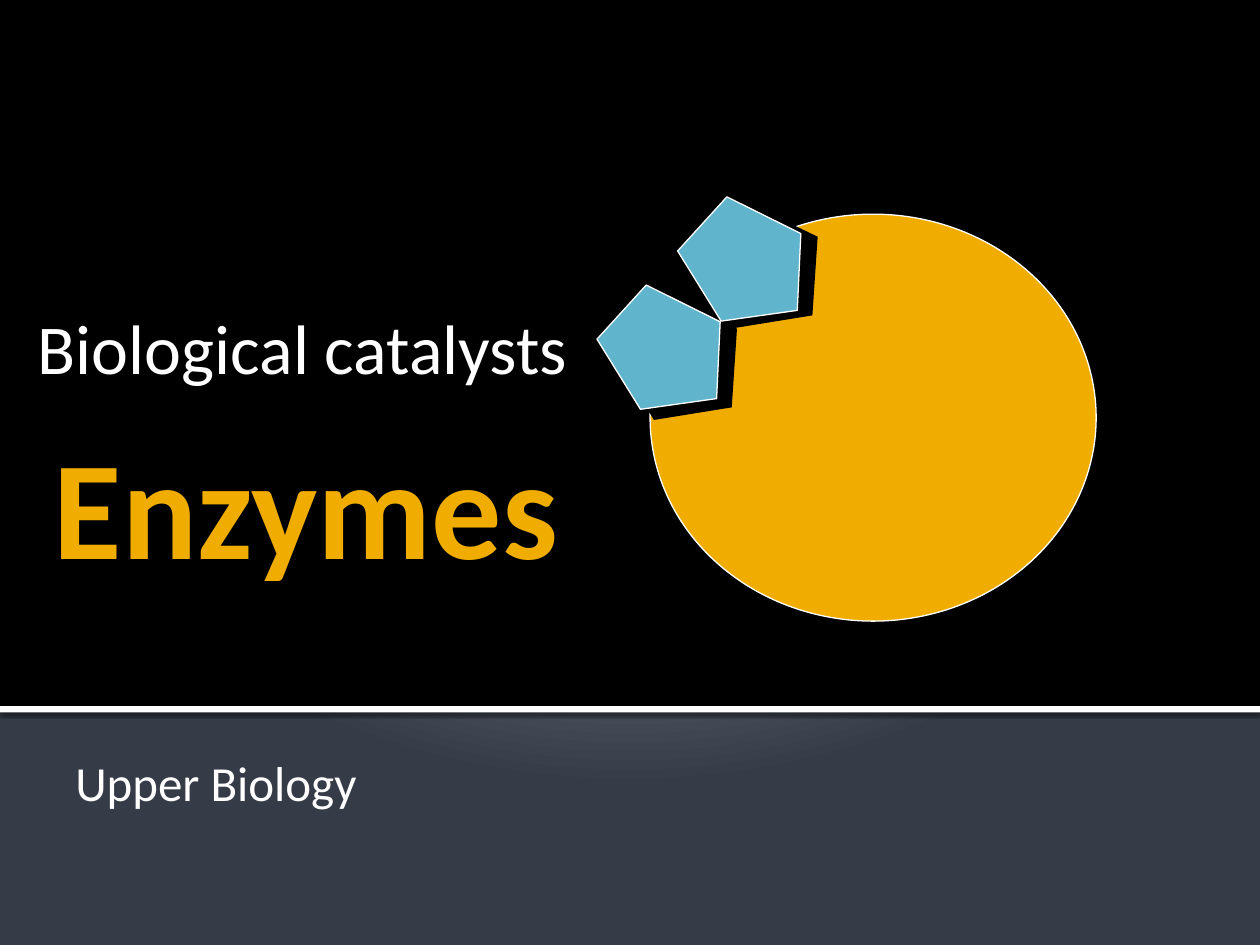
from dataclasses import dataclass
from lxml.etree import SubElement
from pptx import Presentation
from pptx.dml.color import RGBColor
from pptx.enum.shapes import MSO_SHAPE as Shape
from pptx.enum.text import MSO_ANCHOR as Anchor
from pptx.oxml import parse_xml
from pptx.oxml.ns import nsdecls, qn
from pptx.util import Inches, Pt


@dataclass(frozen=True)
class Theme:
    font: str = "Calibri"
    black: str = "000000"
    white: str = "FFFFFF"
    enzyme: str = "F0AD00"
    substrate: str = "60B5CC"
    backdrop: tuple = ((0, "C1C5D3"), (12, "C1C5D3"), (20, "BFC4D2"), (100, "353B47"))
    title: int = 80
    subtitle: int = 40
    course: int = 28
    outline: float = 0.75


THEME = Theme()
WIDTH, HEIGHT = 10, 7.5
PANEL = 0.75 * HEIGHT
TURN = 132.3

TEXTS = [
    ("Enzymes", (0.33, 3.33, 8.83, 1.83), THEME.title, THEME.enzyme, True, Anchor.TOP, (0.1, 0, 0.05, 0)),
    ("Biological catalysts", (0.17, 1.44, 8.83, 1.64), THEME.subtitle, THEME.white, False, Anchor.BOTTOM, (0.13, 0, 0.05, 0)),
    ("Upper Biology", (0.5, 5.92, 4.76, 0.57), THEME.course, THEME.white, False, Anchor.TOP, (0.1, 0.05, 0.1, 0.05)),
]
ACTIVE_SITE = [
    (Shape.REGULAR_PENTAGON, (5.58, 1.65, 0.98, 1.02), TURN),
    (Shape.REGULAR_PENTAGON, (4.94, 2.38, 0.98, 1.02), TURN),
    (Shape.RECTANGLE, (5.26, 2.17, 0.66, 0.55), 313.3),
]
SUBSTRATE = [
    (Shape.REGULAR_PENTAGON, (5.48, 1.61, 0.94, 1.02), TURN),
    (Shape.REGULAR_PENTAGON, (4.84, 2.31, 0.94, 1.02), TURN),
]


def add_figure(shapes, kind, place, fill, outline=None, turn=0):
    figure = shapes.add_shape(kind, *map(Inches, place))
    figure.shadow.inherit = False
    figure.rotation = turn
    figure.fill.solid()
    figure.fill.fore_color.rgb = RGBColor.from_string(fill)
    if outline:
        figure.line.color.rgb = RGBColor.from_string(outline)
        figure.line.width = Pt(THEME.outline)
    else:
        figure.line.fill.background()
    return figure


def add_group(page, parts, fill, outline=None):
    group = page.shapes.add_group_shape()
    for kind, place, turn in parts:
        add_figure(group.shapes, kind, place, fill, outline, turn)


def add_text(page, words, place, size, color, bold, anchor, insets):
    box = page.shapes.add_textbox(*map(Inches, place))
    frame = box.text_frame
    frame.word_wrap = True
    frame.vertical_anchor = anchor
    (frame.margin_left, frame.margin_top,
     frame.margin_right, frame.margin_bottom) = map(Inches, insets)
    para = frame.paragraphs[0]
    span = para.add_run()
    span.text = words
    span.font.name = THEME.font
    span.font.size = Pt(size)
    span.font.bold = bold
    span.font.color.rgb = RGBColor.from_string(color)


def paint_backdrop(page):
    page.background.fill.gradient()
    plain = next(page.element.iter(qn("a:gradFill")))
    stops = "".join(
        f'<a:gs pos="{share * 1000}"><a:srgbClr val="{color}"/></a:gs>'
        for share, color in THEME.backdrop
    )
    radial = parse_xml(
        f'<a:gradFill {nsdecls("a")} rotWithShape="1"><a:gsLst>{stops}</a:gsLst>'
        '<a:path path="circle"><a:fillToRect l="10000" t="-25000" r="10000" b="125000"/>'
        "</a:path></a:gradFill>"
    )
    plain.getparent().replace(plain, radial)


def add_shadow(figure):
    effects = next(figure.element.iter(qn("a:effectLst")))
    shadow = SubElement(
        effects, qn("a:outerShdw"), blurRad=str(Pt(2.5)), dist=str(Pt(0.8)),
        dir=str(90 * 60000), rotWithShape="0",
    )
    color = SubElement(shadow, qn("a:srgbClr"), val=THEME.black)
    SubElement(color, qn("a:alpha"), val="60000")


def main():
    deck = Presentation()
    deck.slide_width, deck.slide_height = Inches(WIDTH), Inches(HEIGHT)
    page = deck.slides.add_slide(deck.slide_layouts[6])
    paint_backdrop(page)
    add_figure(page.shapes, Shape.RECTANGLE, (0, 0, WIDTH, PANEL), THEME.black)
    divider = add_figure(page.shapes, Shape.RECTANGLE, (0, PANEL - 0.02, WIDTH, 0.05), THEME.white)
    add_shadow(divider)
    *headings, course = TEXTS
    for heading in headings:
        add_text(page, *heading)
    add_figure(page.shapes, Shape.OVAL, (5.16, 1.7, 3.54, 3.23), THEME.enzyme, THEME.white)
    add_group(page, ACTIVE_SITE, THEME.black)
    add_group(page, SUBSTRATE, THEME.substrate, THEME.white)
    add_text(page, *course)
    deck.save("out.pptx")


if __name__ == "__main__":
    main()
